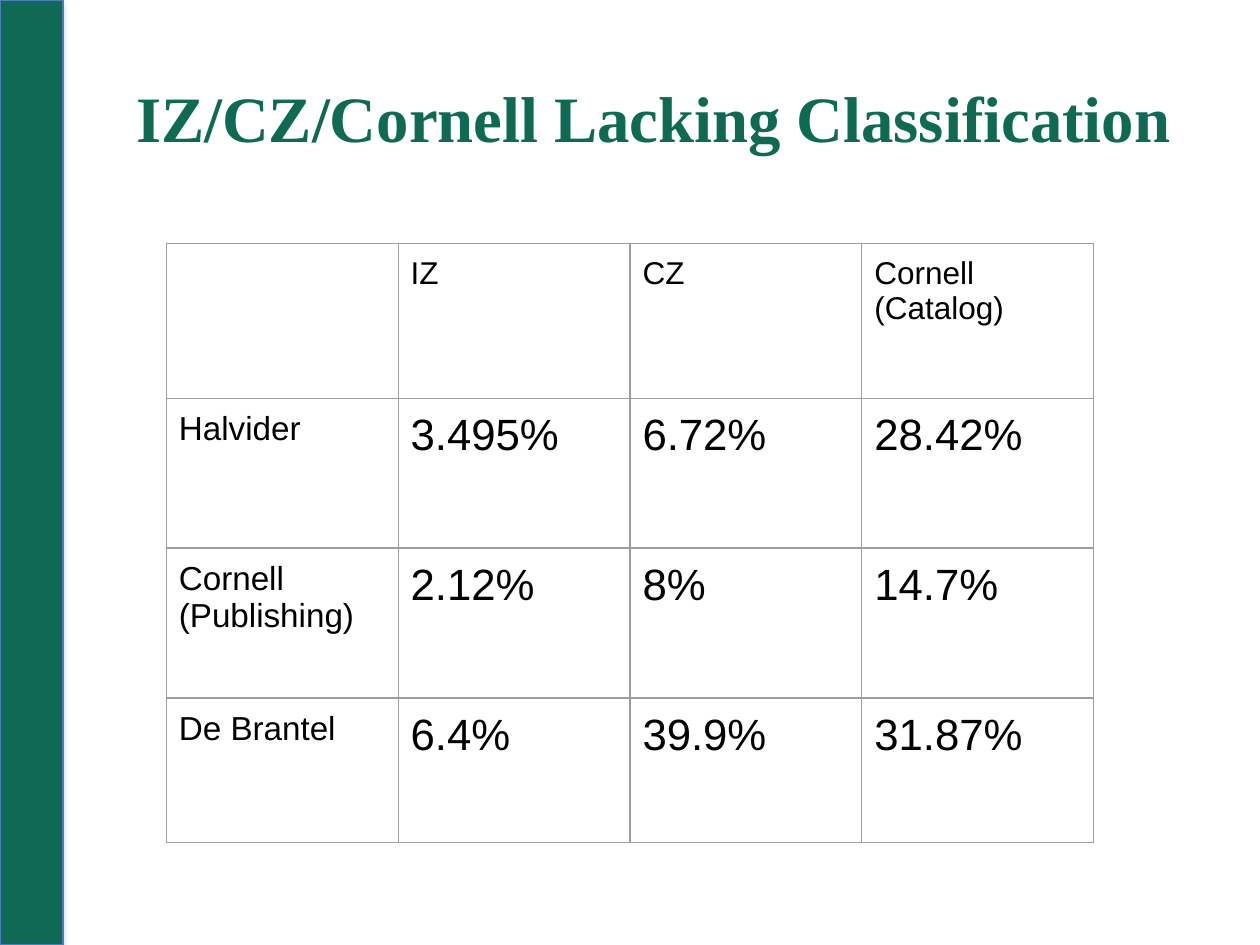
from lxml import etree
from pptx import Presentation
from pptx.dml.color import RGBColor
from pptx.enum.shapes import MSO_SHAPE
from pptx.enum.text import MSO_ANCHOR, PP_ALIGN
from pptx.oxml.ns import qn
from pptx.util import Inches, Pt

RECTANGLE = MSO_SHAPE.RECTANGLE
MIDDLE = MSO_ANCHOR.MIDDLE
LEFT = PP_ALIGN.LEFT
TITLE_ONLY = 5

COLOURS = {
    "green": "0E6A53",
    "bar_line": "4A7EBB",
    "shadow": "808080",
    "grid": "9E9E9E",
    "text": "000000",
}
HEADER_SIZE, LABEL_SIZE, VALUE_SIZE = 18, 19, 25
COLUMN_WIDTH = 1.84
ROW_HEIGHTS = [1.23, 1.19, 1.19, 1.15]
ROWS = [
    ["", "IZ", "CZ", "Cornell (Catalog)"],
    ["Halvider", "3.495%", "6.72%", "28.42%"],
    ["Cornell (Publishing)", "2.12%", "8%", "14.7%"],
    ["De Brantel", "6.4%", "39.9%", "31.87%"],
]


def colour(name):
    return RGBColor.from_string(COLOURS[name])


def add_element(parent, tag, **attributes):
    values = {key: str(value) for key, value in attributes.items()}
    return etree.SubElement(parent, qn(tag), values)


class SlideBuilder:
    """Holds the style and the current slide."""

    def __init__(self, presentation):
        self.slide = presentation.slides.add_slide(
            presentation.slide_layouts[TITLE_ONLY])
        self.title_font = "Times New Roman"
        self.body_font = "Arial"
        self.border_width = Pt(0.75)

    def format_text(self, text_frame, font_name, size, colour_name, bold=False):
        for paragraph in text_frame.paragraphs:
            paragraph.alignment = LEFT
            for run in paragraph.runs:
                run.font.name = font_name
                run.font.size = Pt(size)
                run.font.bold = bold
                run.font.color.rgb = colour(colour_name)

    def add_side_bar(self, width, height):
        bar = self.slide.shapes.add_shape(
            RECTANGLE, 0, 0, Inches(width), Inches(height))
        bar.fill.solid()
        bar.fill.fore_color.rgb = colour("green")
        bar.line.color.rgb = colour("bar_line")
        bar.line.width = self.border_width
        bar.shadow.inherit = False
        effects = bar._element.spPr.find(qn("a:effectLst"))
        shadow = add_element(effects, "a:outerShdw", blurRad=Pt(3.1),
                             dist=Pt(1.8), dir=90 * 60000, rotWithShape=0)
        shade = add_element(shadow, "a:srgbClr", val=COLOURS["shadow"])
        add_element(shade, "a:alpha", val=35000)

    def set_title(self, text, left, top, width, height):
        title = self.slide.shapes.title
        title.left, title.top = Inches(left), Inches(top)
        title.width, title.height = Inches(width), Inches(height)
        text_frame = title.text_frame
        text_frame.text = text
        text_frame.word_wrap = True
        text_frame.vertical_anchor = MIDDLE
        self.format_text(text_frame, self.title_font, 37, "green", bold=True)

    def add_borders(self, cell):
        properties = cell._tc.get_or_add_tcPr()
        for position, side in enumerate(("a:lnL", "a:lnR", "a:lnT", "a:lnB")):
            line = add_element(properties, side, w=self.border_width)
            fill = add_element(line, "a:solidFill")
            add_element(fill, "a:srgbClr", val=COLOURS["grid"])
            properties.insert(position, line)

    def fill_cell(self, cell, text, size):
        cell.fill.background()
        self.add_borders(cell)
        cell.margin_left = cell.margin_right = Inches(0.1)
        cell.margin_top = cell.margin_bottom = Inches(0.1)
        cell.text_frame.text = text
        self.format_text(cell.text_frame, self.body_font, size, "text")

    def add_table(self, rows, left, top):
        column_count = len(rows[0])
        table = self.slide.shapes.add_table(
            len(rows), column_count, Inches(left), Inches(top),
            Inches(COLUMN_WIDTH * column_count), Inches(sum(ROW_HEIGHTS))).table
        table.first_row = table.horz_banding = False
        for column in table.columns:
            column.width = Inches(COLUMN_WIDTH)
        for row_index, texts in enumerate(rows):
            table.rows[row_index].height = Inches(ROW_HEIGHTS[row_index])
            for column_index, text in enumerate(texts):
                if row_index == 0:
                    size = HEADER_SIZE
                else:
                    size = VALUE_SIZE if column_index else LABEL_SIZE
                self.fill_cell(table.cell(row_index, column_index), text, size)


def main():
    presentation = Presentation()
    presentation.slide_width = Inches(10)
    presentation.slide_height = Inches(7.5)
    builder = SlideBuilder(presentation)
    builder.add_side_bar(0.5, 7.5)
    builder.set_title("IZ/CZ/Cornell Lacking Classification",
                      0.98, 0.3, 8.66, 1.25)
    builder.add_table(ROWS, 1.32, 1.93)
    presentation.save("out.pptx")


if __name__ == "__main__":
    main()
